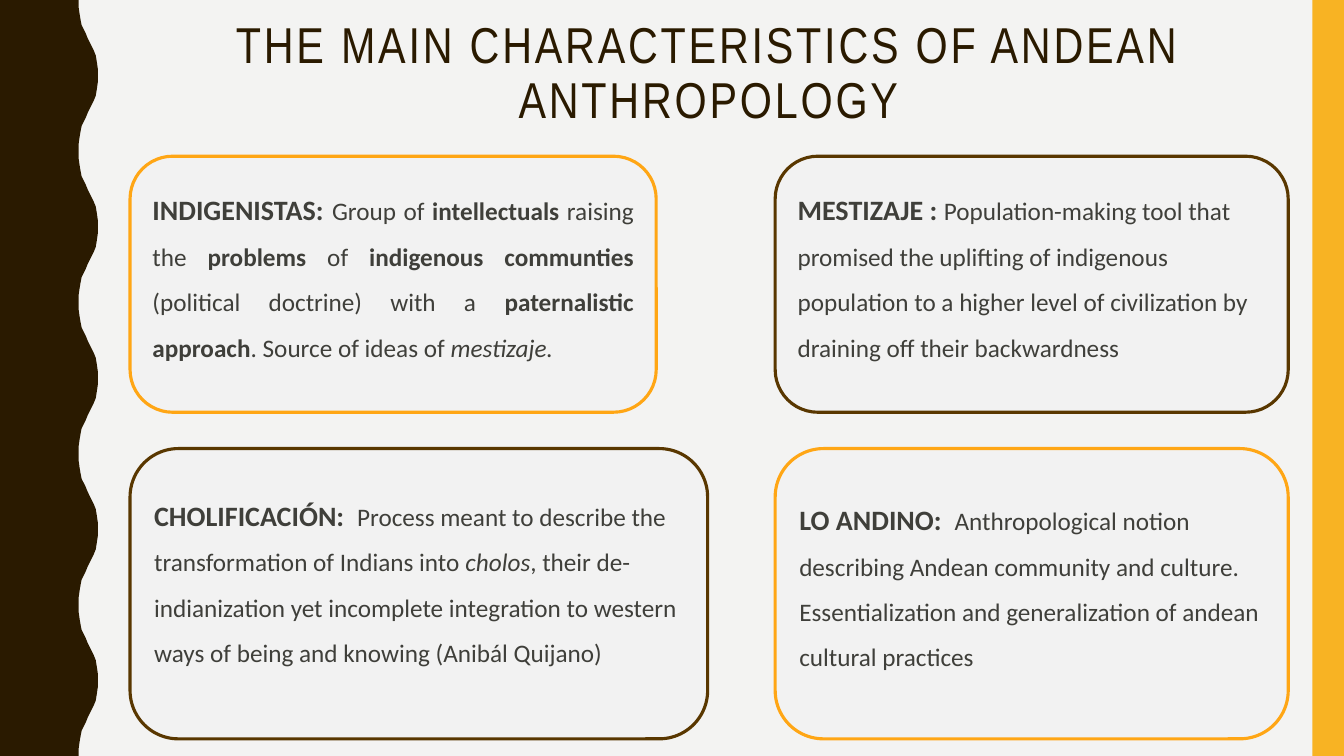
from pptx import Presentation
from pptx.dml.color import RGBColor
from pptx.enum.shapes import MSO_SHAPE
from pptx.enum.text import MSO_ANCHOR, PP_ALIGN
from pptx.util import Inches, Pt

RECTANGLE, ROUNDED = MSO_SHAPE.RECTANGLE, MSO_SHAPE.ROUNDED_RECTANGLE
LEFT, CENTER, JUSTIFY = PP_ALIGN.LEFT, PP_ALIGN.CENTER, PP_ALIGN.JUSTIFY
MIDDLE = MSO_ANCHOR.MIDDLE
COLORS = {"paper": "F3F3F2", "bark": "2A1A00", "sun": "F8B323", "card": "F2F2F2",
          "amber": "FFA615", "brown": "593700", "ink": "3F3F3A"}
COLUMNS, ROWS = 160, 90
HALF_WAVE = [(9.36, 0), (9.36, 0.84), (9.48, 1.68), (9.6, 2.4), (9.72, 3),
             (9.96, 3.48), (10.2, 3.96), (10.44, 4.56), (10.68, 5.04), (10.92, 5.52),
             (11.16, 6), (11.4, 6.6), (11.52, 7.32), (11.64, 8.16), (11.64, 9)]
WAVE_ROWS = 18


def rgb(name):
    return RGBColor.from_string(COLORS[name])


def add_text(paragraph, text, font="Calibri", size=18, color="ink",
             bold=False, italic=False, tracking=0):
    run = paragraph.add_run()
    run.text = text
    run.font.name, run.font.size = font, Pt(size)
    run.font.bold, run.font.italic = bold, italic
    run.font.color.rgb = rgb(color)
    if tracking:
        run.font._element.set("spc", str(tracking * 100))


class Board:
    """Draws styled elements on one slide, placed by grid columns and rows."""

    def __init__(self, deck):
        self.column = deck.slide_width / COLUMNS
        self.row = deck.slide_height / ROWS
        self.slide = deck.slides.add_slide(deck.slide_layouts[6])
        self.slide.background.fill.solid()
        self.slide.background.fill.fore_color.rgb = rgb("paper")

    def place(self, left, top, width, height):
        return (round(left * self.column), round(top * self.row),
                round(width * self.column), round(height * self.row))

    def paint(self, shape, fill, line=None):
        shape.shadow.inherit = False
        shape.fill.solid()
        shape.fill.fore_color.rgb = rgb(fill)
        if line:
            shape.line.color.rgb = rgb(line)
            shape.line.width = Pt(2.25)
        else:
            shape.line.fill.background()

    def wavy_edge(self, fill):
        wave = HALF_WAVE + [(x, WAVE_ROWS - y) for x, y in HALF_WAVE[-2::-1]]
        outline = [(x, y + start) for start in range(0, ROWS, WAVE_ROWS) for x, y in wave]
        points = [(x * self.column, y * self.row) for x, y in outline + [(0, ROWS)]]
        builder = self.slide.shapes.build_freeform(0, 0)
        builder.add_line_segments(points, close=True)
        self.paint(builder.convert_to_shape(), fill)

    def bar(self, box, fill):
        self.paint(self.slide.shapes.add_shape(RECTANGLE, *self.place(*box)), fill)

    def title(self, box, text):
        frame = self.slide.shapes.add_textbox(*self.place(*box)).text_frame
        frame.word_wrap, frame.vertical_anchor = True, MIDDLE
        heading = frame.paragraphs[0]
        heading.alignment, heading.line_spacing = CENTER, 0.9
        add_text(heading, text, font="Arial Narrow", size=36, color="bark", tracking=2)

    def card(self, box, line, term, definition, align=LEFT, bottom=0.35):
        card = self.slide.shapes.add_shape(ROUNDED, *self.place(*box))
        self.paint(card, "card", line)
        frame = card.text_frame
        frame.word_wrap, frame.vertical_anchor = True, MIDDLE
        frame.margin_bottom = Inches(bottom)
        entry = frame.paragraphs[0]
        entry.alignment, entry.line_spacing = align, 1.5
        add_text(entry, term, size=20, bold=True)
        for text, style in definition:
            add_text(entry, text, bold=style == "b", italic=style == "i")


def main():
    deck = Presentation()
    deck.slide_width, deck.slide_height = Inches(13.33), Inches(7.5)
    board = Board(deck)
    board.wavy_edge("bark")
    board.bar((156.24, 0, 3.76, ROWS), "sun")
    board.title((10.2, 1.68, 148.32, 14.4), "THE MAIN CHARACTERISTICS OF ANDEAN ANTHROPOLOGY")

    left, right, right_width = 15.48, 92.28, 61.08
    upper, upper_height, lower, lower_height = 18.6, 30.48, 53.4, 34.56
    board.card((left, upper, 62.64, upper_height), "amber", "INDIGENISTAS: ", [
        ("Group of ", ""), ("intellectuals ", "b"), ("raising the ", ""),
        ("problems ", "b"), ("of ", ""), ("indigenous communties ", "b"),
        ("(political doctrine) with a ", ""), ("paternalistic approach", "b"),
        (". Source of ideas of ", ""), ("mestizaje.", "i")], align=JUSTIFY)
    board.card((right, upper, right_width, upper_height), "brown", "MESTIZAJE : ", [
        ("Population-making tool that promised the uplifting of indigenous population "
         "to a higher level of civilization by draining off their backwardness", "")])
    board.card((left, lower, 68.76, lower_height), "brown", "CHOLIFICACIÓN:  ", [
        ("Process meant to describe the transformation of Indians into ", ""),
        ("cholos", "i"),
        (", their de-indianization yet incomplete integration to western ways of being "
         "and knowing (Anibál Quijano)", "")], bottom=0.43)
    board.card((right, lower, right_width, lower_height), "amber", "LO ANDINO:  ", [
        ("Anthropological notion describing Andean community and culture. "
         "Essentialization and generalization of andean cultural practices", "")])
    deck.save("out.pptx")


if __name__ == "__main__":
    main()
